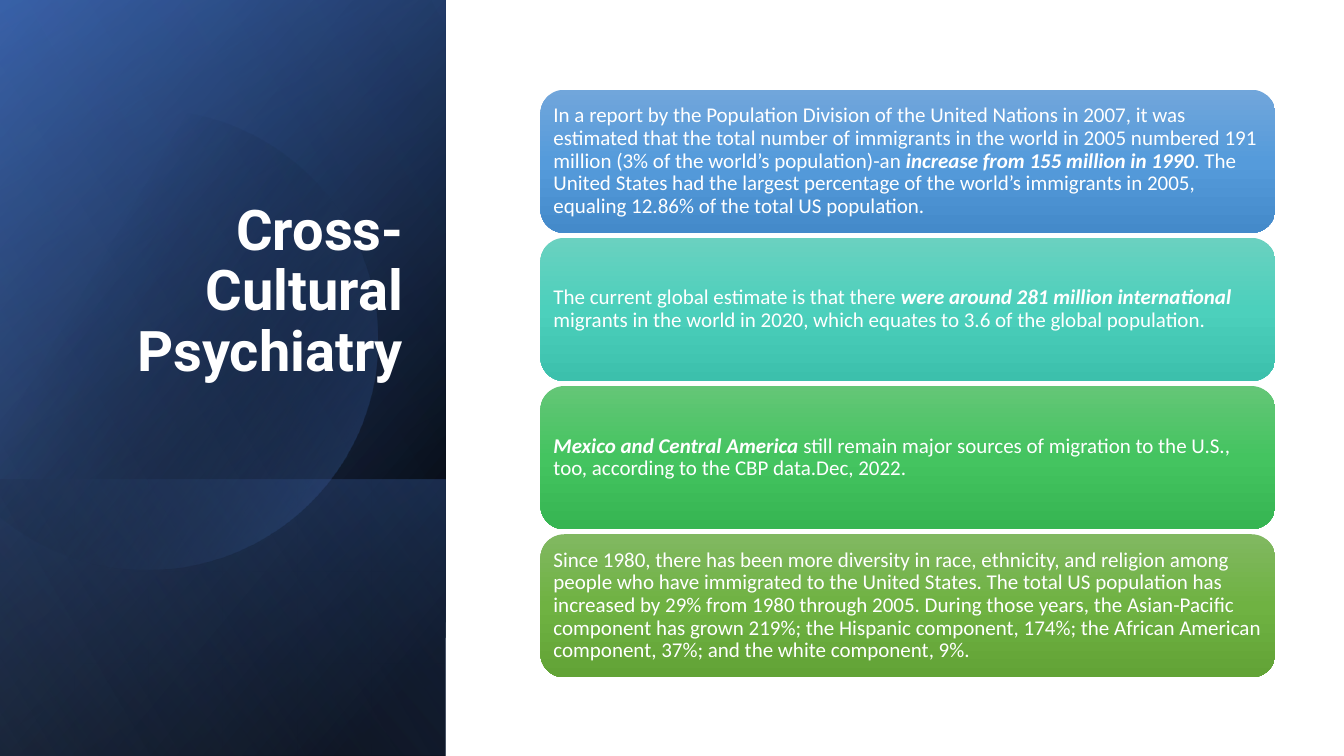
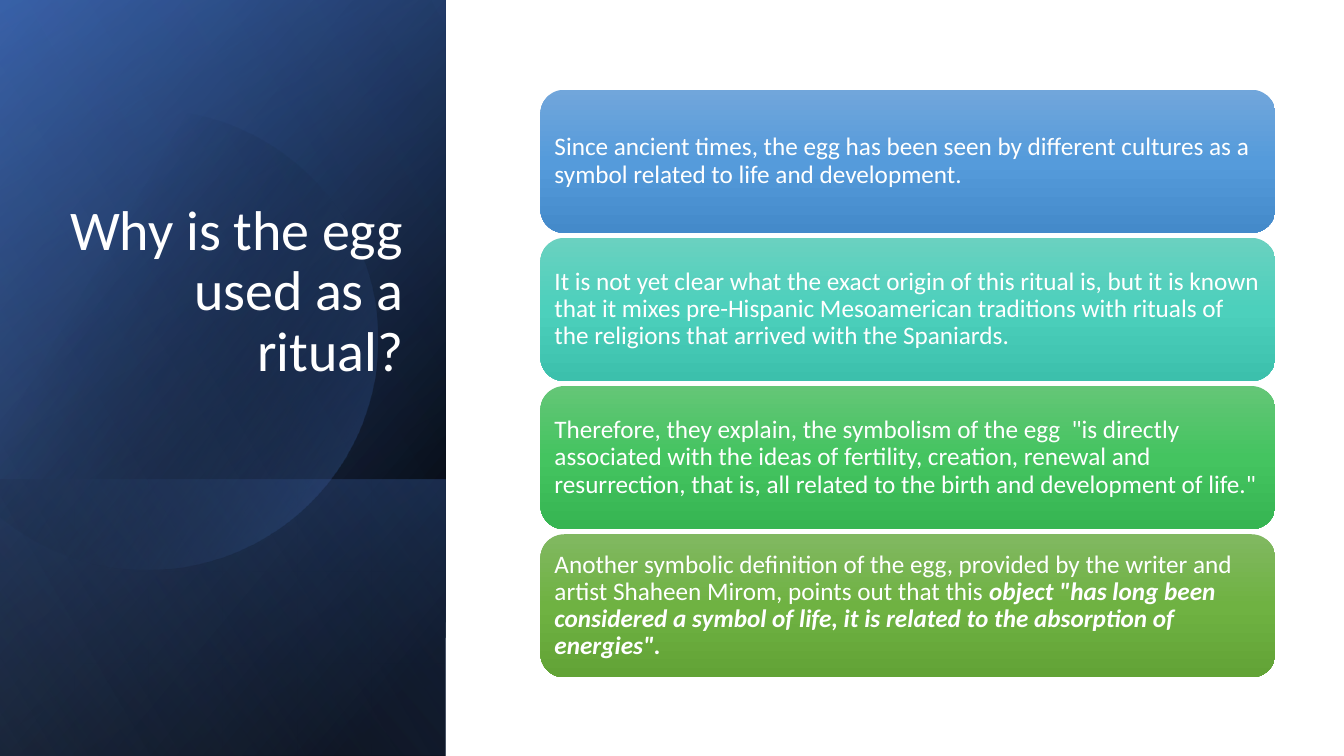
from math import acos, cos, pi, sin

from pptx import Presentation
from pptx.dml.color import RGBColor
from pptx.enum.shapes import MSO_SHAPE as Shape
from pptx.enum.text import MSO_ANCHOR as Anchor, PP_ALIGN as Align
from pptx.oxml import parse_xml
from pptx.oxml.ns import nsdecls, qn
from pptx.util import Pt

PX = 9144  # EMU; 100 px to the inch
SLIDE_W, SLIDE_H = 1333, 750
WHITE, BLACK, BLUE = "FFFFFF", "000000", "4472C4"
BODY_FONT = "Calibri"

PANEL = (0, 0, 442, 750)
TITLE = (64, 184, 341, 201)
CARDS = (536, 89, 729, 583)
CARD_GAP = 5

# Gradient stops: position %, colour, opacity %
BASE = [(8, BLACK, 100), (100, "2F5597", 100)]
GLOW = [(0, BLACK, 0), (99, BLUE, 46)]
FOOT = [(2, BLUE, 29), (100, BLACK, 30)]
DISC = [(29, BLACK, 0), (100, BLUE, 43)]
SHEEN = [(0, BLACK, 0), (99, "8FAADC", 11)]
FOOT_H = 274
CARD_COLOURS = [
    ("71A6DB", "559BDB", "448ACA"),
    ("6AD1C0", "4CD0BC", "3CC0AC"),
    ("64C677", "44C460", "36B552"),
    ("81B861", "6FB242", "62A336"),
]

# Words between asterisks are bold italic
SLIDES = [
    {
        "title": "Cross-Cultural Psychiatry",
        "title_font": {"name": "Roboto", "bold": True},
        "size": 15,
        "inset": 6,
        "cards": [
            "In a report by the Population Division of the United Nations in 2007, it was "
            "estimated that the total number of immigrants in the world in 2005 numbered "
            "191 million (3% of the world’s population)-an *increase from 155 million in "
            "1990*. The United States had the largest percentage of the world’s immigrants "
            "in 2005, equaling 12.86% of the total US population.",
            "The current global estimate is that there *were around 281 million "
            "international *migrants in the world in 2020, which equates to 3.6 of the "
            "global population.",
            "*Mexico and Central America *still remain major sources of migration to the "
            "U.S., too, according to the CBP data.Dec, 2022.",
            "Since 1980, there has been more diversity in race, ethnicity, and religion "
            "among people who have immigrated to the United States. The total US "
            "population has increased by 29% from 1980 through 2005. During those years, "
            "the Asian-Pacific component has grown 219%; the Hispanic component, 174%; "
            "the African American component, 37%; and the white component, 9%.",
        ],
    },
    {
        "title": "Why is the egg used as a ritual?",
        "title_font": {"name": BODY_FONT},
        "size": 18,
        "inset": 7,
        "cards": [
            "Since ancient times, the egg has been seen by different cultures as a symbol "
            "related to life and development.",
            "It is not yet clear what the exact origin of this ritual is, but it is known "
            "that it mixes pre-Hispanic Mesoamerican traditions with rituals of the "
            "religions that arrived with the Spaniards.",
            'Therefore, they explain, the symbolism of the egg  "is directly associated '
            "with the ideas of fertility, creation, renewal and resurrection, that is, all "
            'related to the birth and development of life."',
            "Another symbolic definition of the egg, provided by the writer and artist "
            'Shaheen Mirom, points out that this *object "has long been considered a '
            'symbol of life, it is related to the absorption of energies".*',
        ],
    },
]


def rgb(colour):
    return RGBColor.from_string(colour)


def emu(*lengths):
    return [round(length * PX) for length in lengths]


def set_all(target, values):
    for key, value in values.items():
        setattr(target, key, value)


def paint(shape, stops, angle):
    """Give a shape a linear gradient, clockwise in degrees, without outline or shadow."""
    shape.shadow.inherit = False
    shape.line.fill.background()
    shape.fill.background()
    marks = "".join(
        f'<a:gs pos="{pos * 1000}"><a:srgbClr val="{colour}">'
        f'<a:alpha val="{opacity * 1000}"/></a:srgbClr></a:gs>'
        for pos, colour, opacity in stops
    )
    gradient = parse_xml(
        f'<a:gradFill rotWithShape="1" {nsdecls("a")}><a:gsLst>{marks}</a:gsLst>'
        f'<a:lin ang="{angle * 60000}" scaled="0"/></a:gradFill>'
    )
    properties = shape.fill._xPr
    properties.replace(properties.find(qn("a:noFill")), gradient)


def write(frame, text, font, inset, anchor, align):
    margins = ("margin_left", "margin_top", "margin_right", "margin_bottom")
    set_all(frame, dict.fromkeys(margins, inset * PX))
    set_all(frame, {"word_wrap": True, "vertical_anchor": anchor})
    paragraph = frame.paragraphs[0]
    set_all(paragraph, {"alignment": align, "line_spacing": 0.9})
    for index, words in enumerate(text.split("*")):
        if words:
            run = paragraph.add_run()
            run.text = words
            set_all(run.font, font)
            run.font.color.rgb = rgb(WHITE)
            if index % 2:
                set_all(run.font, {"bold": True, "italic": True})


def add_turned_layer(slide, box, stops, angle):
    """Fill the box with a mirrored rectangle turned by 90 degrees."""
    left, top, width, height = box
    shift = (width - height) / 2
    layer = slide.shapes.add_shape(
        Shape.RECTANGLE, *emu(left + shift, top - shift, height, width)
    )
    layer.rotation = 90
    layer._element.spPr.xfrm.set("flipH", "1")
    paint(layer, stops, angle)


def add_disc(slide, box):
    """Place a circle that is cut off by the left edge of the box."""
    left, top = box[:2]
    centre_x, centre_y, radius, steps = 146, 337, 228, 120
    reach = pi - acos(centre_x / radius)
    angles = [reach * (2 * step / steps - 1) for step in range(steps + 1)]
    points = [
        emu(left + centre_x + radius * cos(a), top + centre_y + radius * sin(a))
        for a in angles
    ]
    outline = slide.shapes.build_freeform(*points[0], scale=1.0)
    outline.add_line_segments(points[1:], close=True)
    paint(outline.convert_to_shape(), DISC, 30)


def add_panel(slide, box):
    left, top, width, height = box
    add_turned_layer(slide, box, BASE, 50)
    add_turned_layer(slide, box, GLOW, 30)
    foot = (left, top + height - FOOT_H, width, FOOT_H)
    add_turned_layer(slide, foot, FOOT, 130)
    add_disc(slide, box)
    add_turned_layer(slide, box, SHEEN, 120)


def add_title(slide, box, text, font):
    title = slide.shapes.add_textbox(*emu(*box))
    write(title.text_frame, text, {"size": Pt(40), **font}, 5, Anchor.BOTTOM, Align.RIGHT)
    left, top, width, height = emu(*box)
    set_all(title, {"left": left, "top": top, "width": width, "height": height})


def add_cards(slide, box, texts, size, inset):
    left, top, width, height = box
    card_h = (height - CARD_GAP * (len(texts) - 1)) / len(texts)
    font = {"name": BODY_FONT, "size": Pt(size)}
    for row, (text, colours) in enumerate(zip(texts, CARD_COLOURS)):
        card_top = top + row * (card_h + CARD_GAP)
        card = slide.shapes.add_shape(
            Shape.ROUNDED_RECTANGLE, *emu(left, card_top, width, card_h)
        )
        stops = [(pos, colour, 100) for pos, colour in zip((0, 50, 100), colours)]
        paint(card, stops, 90)
        write(card.text_frame, text, font, inset, Anchor.MIDDLE, Align.LEFT)


def build_slide(deck, content):
    slide = deck.slides.add_slide(deck.slide_layouts[6])
    add_panel(slide, PANEL)
    add_title(slide, TITLE, content["title"], content["title_font"])
    add_cards(slide, CARDS, content["cards"], content["size"], content["inset"])


def main():
    deck = Presentation()
    deck.slide_width, deck.slide_height = emu(SLIDE_W, SLIDE_H)
    for content in SLIDES:
        build_slide(deck, content)
    deck.save("out.pptx")


if __name__ == "__main__":
    main()
